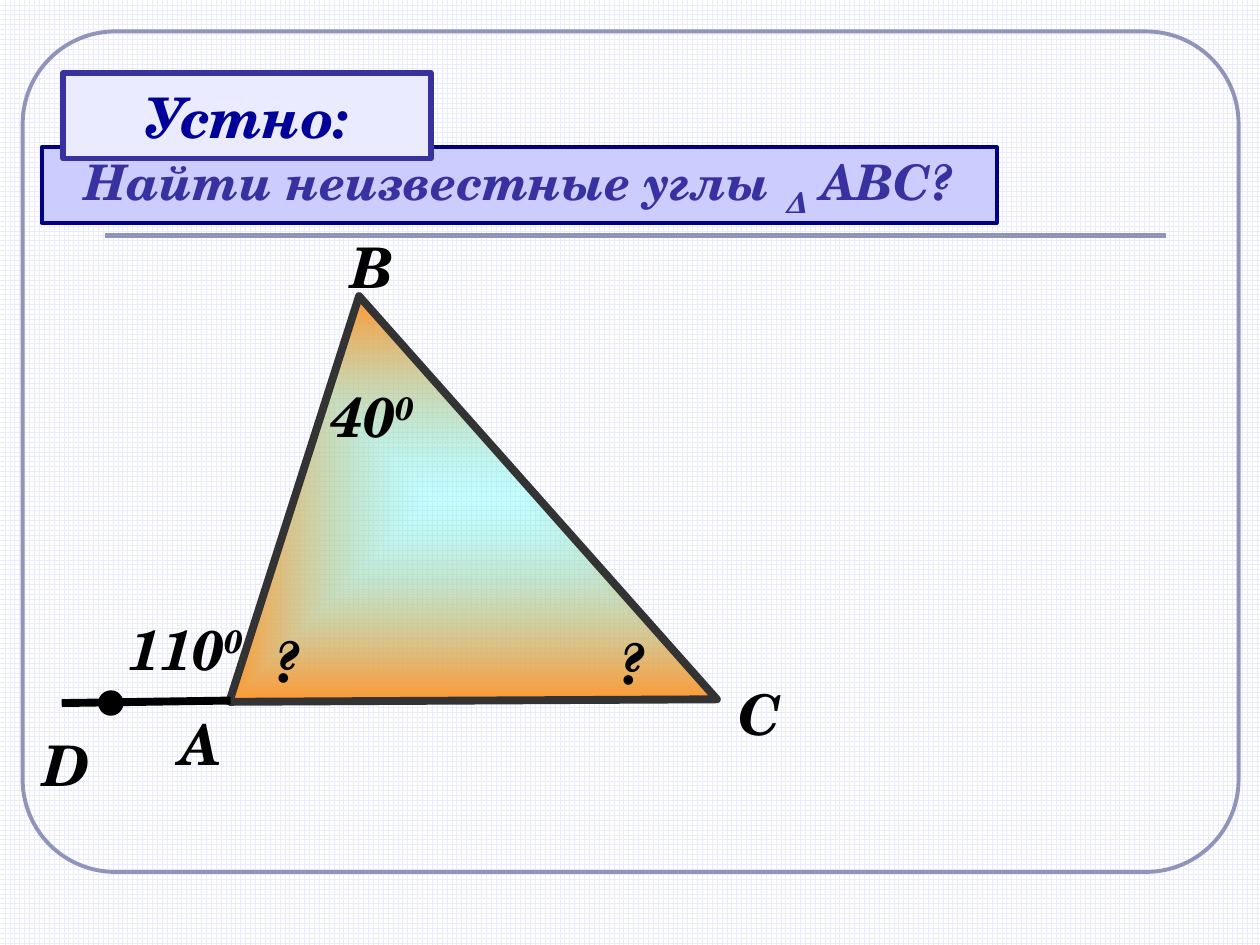
from pptx import Presentation
from pptx.dml.color import RGBColor
from pptx.enum.dml import MSO_PATTERN
from pptx.enum.shapes import MSO_CONNECTOR, MSO_SHAPE
from pptx.enum.text import MSO_ANCHOR, MSO_AUTO_SIZE, PP_ALIGN
from pptx.oxml import parse_xml
from pptx.oxml.ns import nsdecls, qn
from pptx.util import Pt
from lxml.etree import SubElement

PX = 9144  # 100 px to the inch
FONT = "TeX Gyre Schola"
BLACK = RGBColor(0, 0, 0)
WHITE = RGBColor(0xFF, 0xFF, 0xFF)
COAL = RGBColor(0x33, 0x33, 0x33)
GREY = RGBColor(0x90, 0x94, 0xB8)
PALE = RGBColor(0xEB, 0xEB, 0xFF)
LILAC = RGBColor(0xCC, 0xCC, 0xFF)
INDIGO = RGBColor(0x37, 0x32, 0xA0)
NAVY = RGBColor(0, 0, 0x80)
BLUE = RGBColor(0, 0, 0x99)
CYAN = RGBColor(0x66, 0xFF, 0xFF)
ORANGE = RGBColor(0xFF, 0x99, 0x33)


def emu(*nums):
    return [n * PX for n in nums]


def stroke(shape, color, width):
    shape.line.color.rgb = color
    shape.line.width = Pt(width)


def paint(shape, fill, color, width):
    shape.shadow.inherit = False
    if fill is None:
        shape.fill.background()
    else:
        shape.fill.solid()
        shape.fill.fore_color.rgb = fill
    stroke(shape, color, width)


def write(shape, runs, size, color, align, anchor):
    """Fill a shape with (text, baseline percent) runs."""
    frame = shape.text_frame
    frame.word_wrap = True
    frame.auto_size = MSO_AUTO_SIZE.NONE
    frame.vertical_anchor = anchor
    para = frame.paragraphs[0]
    para.alignment = align
    for text, base in runs:
        run = para.add_run()
        run.text = text
        font = run.font
        font.name, font.size = FONT, Pt(size)
        font.bold = font.italic = True
        font.color.rgb = color
        if base:
            run._r.get_or_add_rPr().set("baseline", str(base * 1000))


def add_line(slide, start, end, color, width):
    line = slide.shapes.add_connector(
        MSO_CONNECTOR.STRAIGHT, *emu(*start), *emu(*end))
    stroke(line, color, width)
    SubElement(line._element.spPr, qn("a:effectLst"))


def add_label(slide, x, y, width, *runs):
    box = slide.shapes.add_textbox(*emu(x, y, width, 63))
    write(box, runs, 32, BLACK, PP_ALIGN.LEFT, MSO_ANCHOR.TOP)


def add_frame(slide, x, y, w, h):
    back = slide.background.fill
    back.patterned()
    back.pattern = MSO_PATTERN.LARGE_GRID
    back.fore_color.rgb = PALE
    back.back_color.rgb = WHITE
    frame = slide.shapes.add_shape(
        MSO_SHAPE.ROUNDED_RECTANGLE, *emu(x, y, w, h))
    frame.adjustments[0] = 0.11
    paint(frame, None, GREY, 2.25)
    add_line(slide, (x + 65, y + 162), (x + 907, y + 162), GREY, 3)


def glow(shape):
    """Shade from a clear cyan centre to orange edges."""
    grad = parse_xml(
        f'<a:gradFill {nsdecls("a")} rotWithShape="1"><a:gsLst>'
        f'<a:gs pos="0"><a:srgbClr val="{CYAN}"><a:alpha val="36000"/>'
        f'</a:srgbClr></a:gs>'
        f'<a:gs pos="100000"><a:srgbClr val="{ORANGE}"/></a:gs></a:gsLst>'
        '<a:path path="rect"><a:fillToRect l="50000" t="50000" '
        'r="50000" b="50000"/></a:path></a:gradFill>')
    shape._element.spPr.find(qn("a:custGeom")).addnext(grad)


def add_figure(slide, x, y):
    """Draw triangle ABC with its outer ray AD and all labels."""
    a, b, c = (x + 133, y + 377), (x + 236, y + 55), (x + 520, y + 375)
    path = slide.shapes.build_freeform(*a, scale=PX)
    path.add_line_segments([c, b], close=True)
    shape = path.convert_to_shape()
    shape.shadow.inherit = False
    glow(shape)
    stroke(shape, COAL, 4.5)

    add_line(slide, (x + 134, y + 376), (x, y + 378), BLACK, 4.5)
    dot = slide.shapes.add_shape(
        MSO_SHAPE.OVAL, *emu(x + 31, y + 370, 16, 16))
    paint(dot, BLACK, BLACK, 3)

    for text, dx, dy in (("А", 84, 378), ("В", 220, 0),
                         ("С", 527, 354), ("D", -24, 395)):
        add_label(slide, x + dx, y + dy, 52, (text, 0))
    for text, dx, dy in (("110", 43, 303), ("40", 204, 118)):
        add_label(slide, x + dx, y + dy, 135, (text, 0), ("0", 30))
    for dx, dy in ((159, 312), (433, 314)):
        add_label(slide, x + dx, y + dy, 110, ("?", 0))


def add_task(slide, x, y, w, h):
    bar = slide.shapes.add_shape(MSO_SHAPE.RECTANGLE, *emu(x, y, w, h))
    paint(bar, LILAC, NAVY, 2.25)
    runs = (("Найти неизвестные углы ", 0), ("Δ", -25), (" АВС?", 0))
    write(bar, runs, 28, INDIGO, PP_ALIGN.CENTER, MSO_ANCHOR.MIDDLE)


def add_title(slide, x, y, w, h):
    title = slide.shapes.title
    title.left, title.top, title.width, title.height = emu(x, y, w, h)
    title.fill.solid()
    title.fill.fore_color.rgb = PALE
    stroke(title, INDIGO, 3)
    write(title, [("Устно:", 0)], 32, BLUE,
          PP_ALIGN.CENTER, MSO_ANCHOR.MIDDLE)
    # The title overlaps the task bar, so it goes to the front.
    slide.shapes._spTree.append(title._element)


def main():
    deck = Presentation()
    deck.slide_width, deck.slide_height = emu(1000, 750)
    slide = deck.slides.add_slide(deck.slide_layouts[5])
    add_frame(slide, 18, 25, 965, 667)
    add_figure(slide, 49, 180)
    add_task(slide, 33, 117, 758, 60)
    add_title(slide, 50, 58, 292, 68)
    deck.save("out.pptx")


if __name__ == "__main__":
    main()
